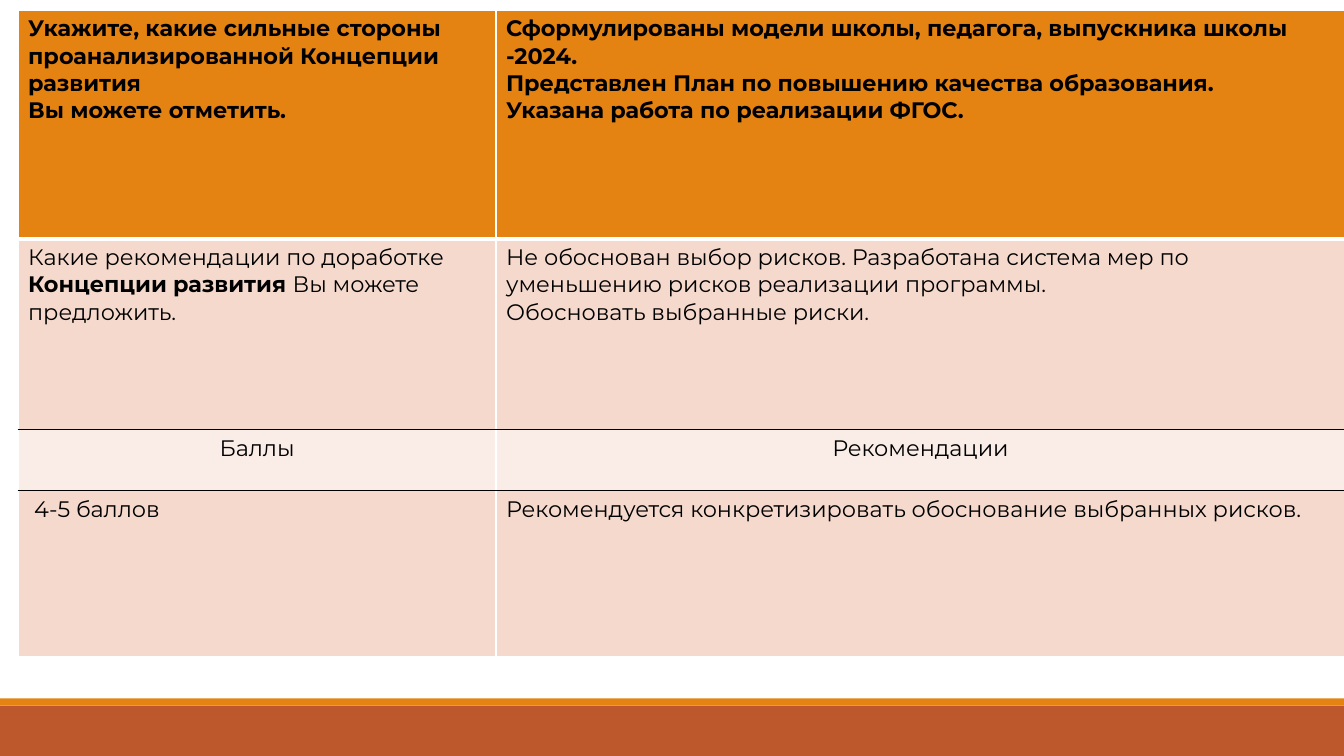
from dataclasses import dataclass

from lxml import etree
from pptx import Presentation
from pptx.dml.color import RGBColor
from pptx.enum.shapes import MSO_SHAPE
from pptx.enum.text import PP_ALIGN
from pptx.oxml.ns import qn
from pptx.util import Inches, Pt

RECT = MSO_SHAPE.RECTANGLE
LEFT, CENTER = PP_ALIGN.LEFT, PP_ALIGN.CENTER

COLORS = {
    "white": "FFFFFF",
    "black": "000000",
    "orange": "E48312",
    "rust": "BD582C",
    "peach": "F5D9CC",
    "pale": "FAEDE7",
}
FONT = "Montserrat"
TEXT_SIZE = 16
GRID_COLS, GRID_ROWS = 1333, 750
GRID_UNIT = Inches(0.01)
TABLE_LEFT, TABLE_TOP = 18, 10
COLUMN_SPANS = (474, 842)
BOLD_MARK = "|"


@dataclass
class Band:
    top: int
    height: int
    color: str


@dataclass
class Rule:
    color: str
    width: int


@dataclass
class Row:
    height: int
    fill: str
    top: Rule
    bottom: Rule
    texts: tuple[str, str]
    bold: bool = False
    align: PP_ALIGN = LEFT


THIN_WHITE = Rule("white", 1)
THICK_WHITE = Rule("white", 3)
THIN_BLACK = Rule("black", 1)

BANDS = [Band(700, 50, "rust"), Band(693, 7, "orange")]

ROWS = [
    Row(227, "orange", THIN_WHITE, THICK_WHITE, (
        "Укажите, какие сильные стороны\n"
        "проанализированной Концепции развития\n"
        "Вы можете отметить.",
        "Сформулированы модели школы, педагога, выпускника школы -2024.\n"
        "Представлен План по повышению качества образования.\n"
        "Указана работа по реализации ФГОС.",
    ), bold=True),
    Row(189, "peach", THICK_WHITE, THIN_BLACK, (
        "Какие рекомендации по доработке |Концепции развития |Вы можете\n"
        "предложить.",
        "Не обоснован выбор рисков. Разработана система мер по "
        "уменьшению рисков реализации программы.\n"
        "Обосновать выбранные риски.",
    )),
    Row(61, "pale", THIN_BLACK, THIN_BLACK, ("Баллы", "Рекомендации"), align=CENTER),
    Row(164, "peach", THIN_BLACK, THIN_WHITE, (
        " 4-5 баллов",
        "Рекомендуется конкретизировать обоснование выбранных рисков.",
    )),
]


def rgb(name: str) -> RGBColor:
    return RGBColor.from_string(COLORS[name])


def grid(units: int) -> int:
    return units * GRID_UNIT


def draw_band(s, band: Band) -> None:
    sp = s.shapes.add_shape(RECT, 0, grid(band.top), grid(GRID_COLS), grid(band.height))
    sp.shadow.inherit = False
    sp.fill.solid()
    sp.fill.fore_color.rgb = rgb(band.color)
    sp.line.fill.background()


def set_borders(cell, row: Row) -> None:
    tc_pr = cell._tc.get_or_add_tcPr()
    sides = {"L": THIN_WHITE, "R": THIN_WHITE, "T": row.top, "B": row.bottom}
    for i, (side, rule) in enumerate(sides.items()):
        ln = etree.Element(qn(f"a:ln{side}"), w=str(Pt(rule.width)))
        fill = etree.SubElement(ln, qn("a:solidFill"))
        etree.SubElement(fill, qn("a:srgbClr"), val=COLORS[rule.color])
        tc_pr.insert(i, ln)


def write_cell(cell, text: str, row: Row) -> None:
    cell.fill.solid()
    cell.fill.fore_color.rgb = rgb(row.fill)
    set_borders(cell, row)
    tf = cell.text_frame
    tf.text = text.replace(BOLD_MARK, "")
    for p, line in zip(tf.paragraphs, text.split("\n")):
        p.alignment = row.align
        first, *rest = line.split(BOLD_MARK)
        p.text = first
        for part in rest:
            p.add_run().text = part
        for i, r in enumerate(p.runs):
            r.font.name = FONT
            r.font.size = Pt(TEXT_SIZE)
            r.font.bold = row.bold or i % 2 == 1
            r.font.color.rgb = rgb("black")


def draw_table(s, rows: list[Row]) -> None:
    table = s.shapes.add_table(
        len(rows), len(COLUMN_SPANS), grid(TABLE_LEFT), grid(TABLE_TOP),
        grid(sum(COLUMN_SPANS)), grid(sum(row.height for row in rows)),
    ).table
    for column, span in zip(table.columns, COLUMN_SPANS):
        column.width = grid(span)
    for table_row, row in zip(table.rows, rows):
        table_row.height = grid(row.height)
        for cell, text in zip(table_row.cells, row.texts):
            write_cell(cell, text, row)


def main() -> None:
    prs = Presentation()
    prs.slide_width, prs.slide_height = grid(GRID_COLS), grid(GRID_ROWS)
    s = prs.slides.add_slide(prs.slide_layouts[6])
    for band in BANDS:
        draw_band(s, band)
    draw_table(s, ROWS)
    prs.save("out.pptx")


if __name__ == "__main__":
    main()
